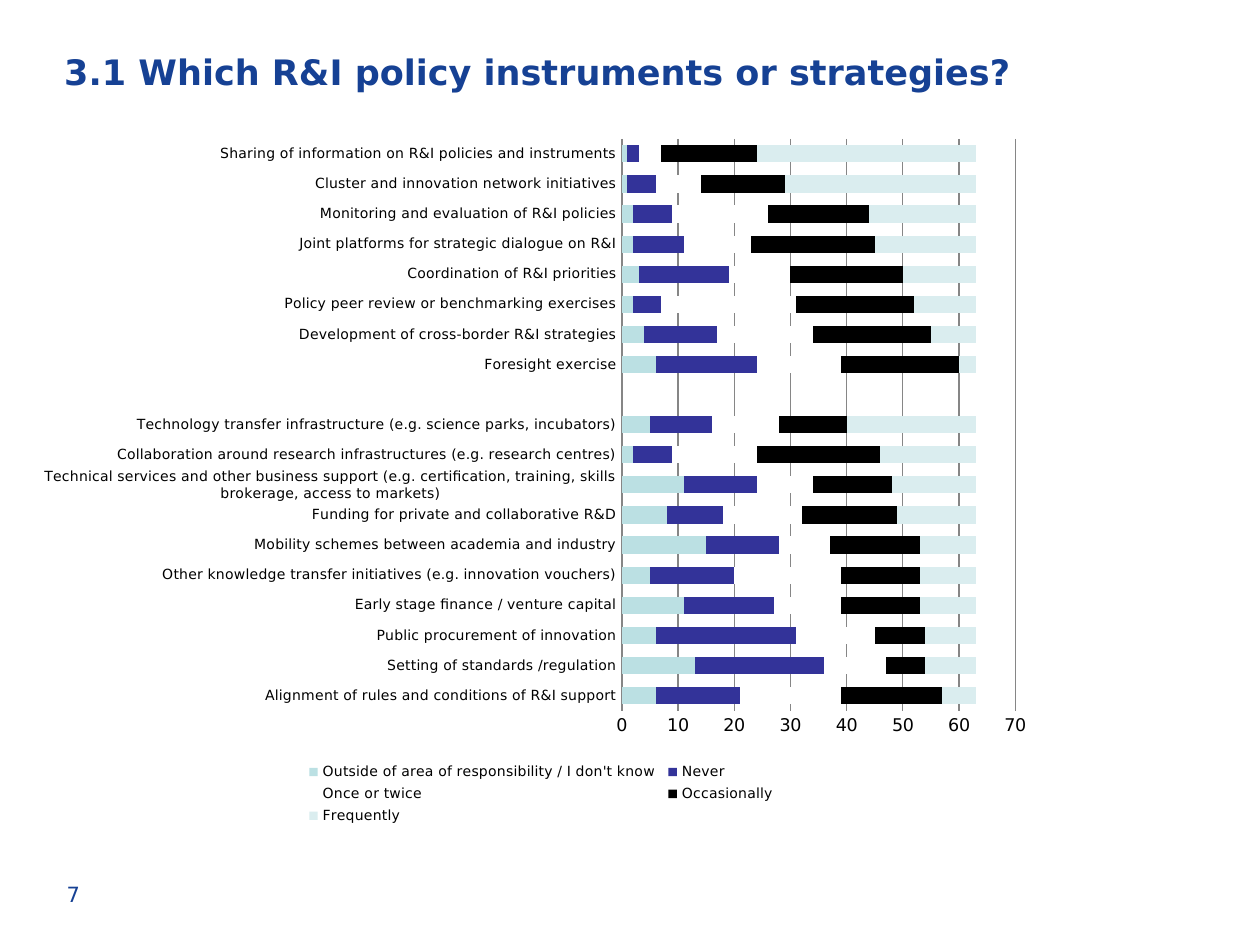
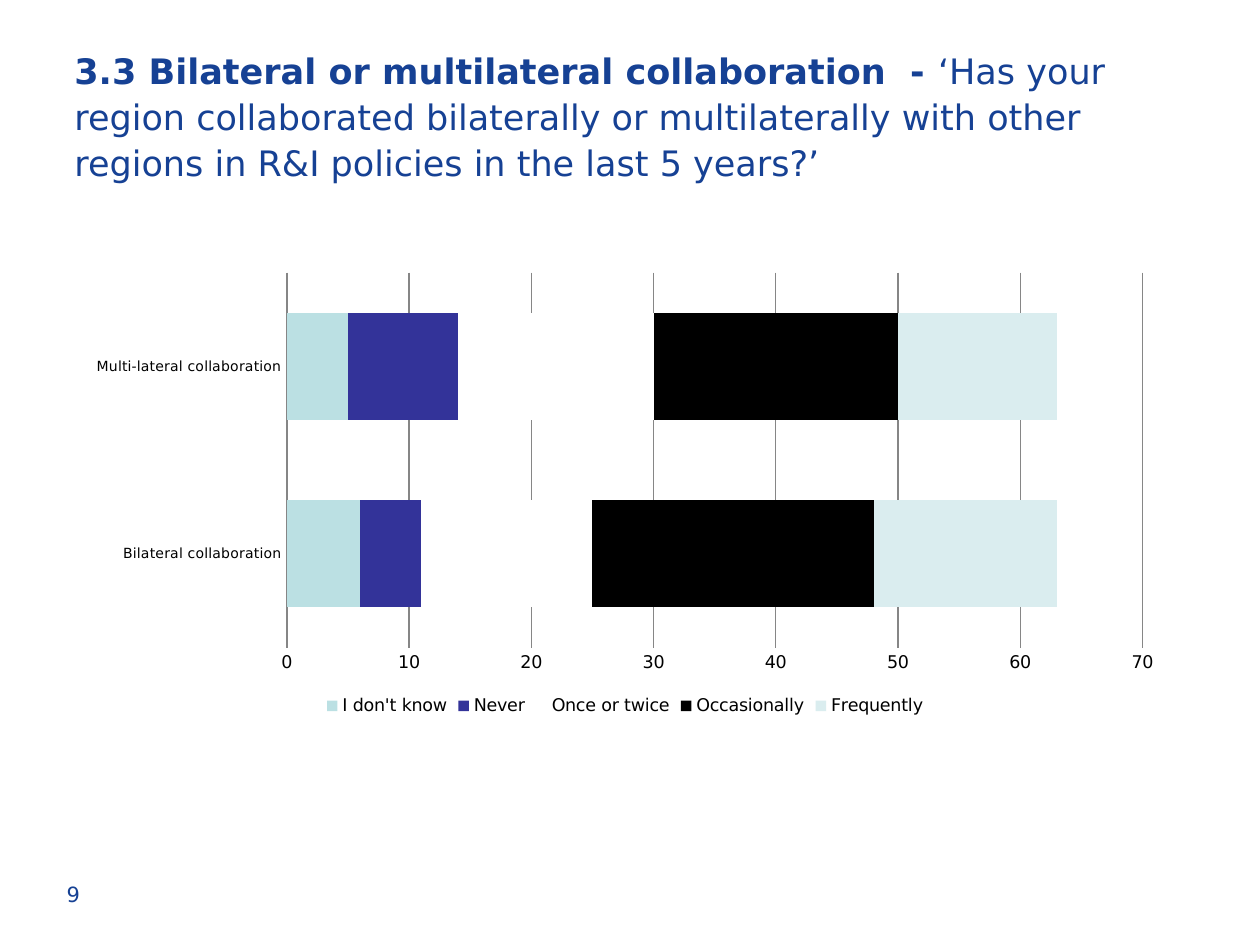
from pptx import Presentation
from pptx.chart.data import CategoryChartData
from pptx.dml.color import RGBColor
from pptx.enum.chart import XL_CHART_TYPE, XL_LEGEND_POSITION, XL_TICK_MARK
from pptx.enum.text import MSO_ANCHOR, MSO_AUTO_SIZE, PP_ALIGN
from pptx.oxml import parse_xml
from pptx.oxml.ns import nsdecls, qn
from pptx.util import Inches, Pt

STACKED_BAR = XL_CHART_TYPE.BAR_STACKED
LEGEND_BOTTOM = XL_LEGEND_POSITION.BOTTOM
NO_TICK = XL_TICK_MARK.NONE
TOP, MIDDLE = MSO_ANCHOR.TOP, MSO_ANCHOR.MIDDLE
NO_AUTOFIT = MSO_AUTO_SIZE.NONE
LEFT = PP_ALIGN.LEFT
TITLE_ONLY = 5

BLUE = RGBColor(0x16, 0x41, 0x94)
BLACK = RGBColor(0x00, 0x00, 0x00)
GRID_GREY = RGBColor(0x86, 0x86, 0x86)
ANSWER_COLOURS = [
    RGBColor(0xBB, 0xE0, 0xE3),
    RGBColor(0x33, 0x33, 0x99),
    RGBColor(0xFF, 0xFF, 0xFF),
    BLACK,
    RGBColor(0xDA, 0xED, 0xEF),
]

FONT = "DejaVu Sans"
TITLE_FORMAT = {"name": FONT, "size": Pt(20)}
NUMBER_FORMAT = {"name": FONT, "size": Pt(12)}
CHART_FORMAT = {"name": FONT, "size": Pt(10), "bold": False}
SMALL_FORMAT = {"name": FONT, "size": Pt(8), "bold": False}

FREQUENCIES = ["Never", "Once or twice", "Occasionally", "Frequently"]

# Each row: instrument, then answers from "don't know" to "Frequently", bottom bar first
INSTRUMENT_ROWS = [
    ("Alignment of rules and conditions of R&I support", 6, 15, 18, 18, 6),
    ("Setting of standards /regulation", 13, 23, 11, 7, 9),
    ("Public procurement of innovation", 6, 25, 14, 9, 9),
    ("Early stage finance / venture capital", 11, 16, 12, 14, 10),
    ("Other knowledge transfer initiatives (e.g. innovation vouchers)", 5, 15, 19, 14, 10),
    ("Mobility schemes between academia and industry", 15, 13, 9, 16, 10),
    ("Funding for private and collaborative R&D", 8, 10, 14, 17, 14),
    ("Technical services and other business support (e.g. certification, training, "
     "skills brokerage, access to markets)", 11, 13, 10, 14, 15),
    ("Collaboration around research infrastructures (e.g. research centres)", 2, 7, 15, 22, 17),
    ("Technology transfer infrastructure (e.g. science parks, incubators)", 5, 11, 12, 12, 23),
    ("", None, None, None, None, None),
    ("Foresight exercise", 6, 18, 15, 21, 3),
    ("Development of cross-border R&I strategies", 4, 13, 17, 21, 8),
    ("Policy peer review or benchmarking exercises", 2, 5, 24, 21, 11),
    ("Coordination of R&I priorities", 3, 16, 11, 20, 13),
    ("Joint platforms for strategic dialogue on R&I", 2, 9, 12, 22, 18),
    ("Monitoring and evaluation of R&I policies", 2, 7, 17, 18, 19),
    ("Cluster and innovation network initiatives", 1, 5, 8, 15, 34),
    ("Sharing of information on R&I policies and instruments", 1, 2, 4, 17, 39),
]
COLLABORATION_ROWS = [
    ("Bilateral collaboration", 6, 5, 14, 23, 15),
    ("Multi-lateral collaboration", 5, 9, 16, 20, 13),
]


def apply_format(font, values, colour):
    for attribute, value in values.items():
        setattr(font, attribute, value)
    font.color.rgb = colour


def manual_layout(x, y, width, height, target=""):
    """Return a chart layout element; lengths are fractions of the chart."""
    return parse_xml(
        f'<c:layout {nsdecls("c")}><c:manualLayout>{target}'
        '<c:xMode val="edge"/><c:yMode val="edge"/>'
        f'<c:x val="{x}"/><c:y val="{y}"/><c:w val="{width}"/><c:h val="{height}"/>'
        '</c:manualLayout></c:layout>'
    )


def replace_layout(parent, position, layout):
    for existing in parent.findall(qn("c:layout")):
        parent.remove(existing)
    parent.insert(position, layout)


class SurveyDeck:
    def __init__(self):
        self.presentation = Presentation()
        self.presentation.slide_width = Inches(10)
        self.presentation.slide_height = Inches(7.5)
        self.slide = None

    def add_slide(self, number):
        layout = self.presentation.slide_layouts[TITLE_ONLY]
        self.slide = self.presentation.slides.add_slide(layout)
        self.add_page_number(number)

    def add_page_number(self, number):
        box = self.slide.shapes.add_textbox(Inches(0.43), Inches(6.9), Inches(2.33), Inches(0.4))
        frame = box.text_frame
        frame.word_wrap = True
        frame.vertical_anchor = MIDDLE
        frame.margin_top = frame.margin_bottom = 0
        run = frame.paragraphs[0].add_run()
        run.text = str(number)
        apply_format(run.font, NUMBER_FORMAT, BLUE)

    def add_title(self, left, top, heading, question=""):
        """Write a bold heading, followed by a question in regular weight."""
        title = self.slide.shapes.title
        title.left, title.top = Inches(left), Inches(top)
        title.width, title.height = Inches(8.98), Inches(0.71)
        frame = title.text_frame
        frame.margin_left = frame.margin_right = frame.margin_top = frame.margin_bottom = 0
        frame.word_wrap = True
        frame.auto_size = NO_AUTOFIT
        frame.vertical_anchor = TOP
        paragraph = frame.paragraphs[0]
        paragraph.alignment = LEFT
        paragraph.line_spacing = 1.1
        for text, bold in ((heading, True), (question, False)):
            if text:
                run = paragraph.add_run()
                run.text = text
                apply_format(run.font, {**TITLE_FORMAT, "bold": bold}, BLUE)

    def add_answer_chart(self, bounds, unknown_label, rows, plot_area, legend_format,
                         legend_area=None):
        labels, *answers = zip(*rows)
        data = CategoryChartData(number_format="General")
        data.categories = labels
        for name, values in zip([unknown_label, *FREQUENCIES], answers):
            data.add_series(name, values)
        frame = self.slide.shapes.add_chart(STACKED_BAR, *map(Inches, bounds), data)
        chart = frame.chart
        chart.has_title = False
        apply_format(chart.font, CHART_FORMAT, BLACK)

        plot = chart.plots[0]
        plot.gap_width, plot.overlap = 75, 100
        plot.vary_by_categories = False
        for series, colour in zip(plot.series, ANSWER_COLOURS):
            series.format.fill.solid()
            series.format.fill.fore_color.rgb = colour
            series.format.line.fill.background()
        self.style_axes(chart)

        chart.has_legend = True
        chart.legend.position = LEGEND_BOTTOM
        chart.legend.include_in_layout = False
        apply_format(chart.legend.font, legend_format, BLACK)

        inner = '<c:layoutTarget val="inner"/>'
        plot_element = chart.element.find(".//" + qn("c:plotArea"))
        replace_layout(plot_element, 0, manual_layout(*plot_area, target=inner))
        if legend_area:
            legend_element = chart.element.find(".//" + qn("c:legend"))
            replace_layout(legend_element, 1, manual_layout(*legend_area))

    def style_axes(self, chart):
        categories, values = chart.category_axis, chart.value_axis
        for axis in (categories, values):
            axis.major_tick_mark = axis.minor_tick_mark = NO_TICK
        categories.has_major_gridlines = False
        apply_format(categories.tick_labels.font, SMALL_FORMAT, BLACK)
        values.minimum_scale, values.maximum_scale, values.major_unit = 0, 70, 10
        values.has_major_gridlines = True
        values.format.line.fill.background()
        for line in (categories.format.line, values.major_gridlines.format.line):
            line.color.rgb = GRID_GREY
            line.width = Pt(0.75)


def main():
    deck = SurveyDeck()

    deck.add_slide(7)
    deck.add_title(0.51, 0.37, "3.1 Which R&I policy instruments or strategies?")
    deck.add_answer_chart(
        (0.2, 0.99, 8.11, 5.59),
        "Outside of area of responsibility / I don't know",
        INSTRUMENT_ROWS,
        plot_area=(0.584, 0.02, 0.385, 0.812),
        legend_format=SMALL_FORMAT,
        legend_area=(0.27, 0.9, 0.47, 0.1),
    )

    deck.add_slide(9)
    deck.add_title(
        0.59, 0.36,
        "3.3 Bilateral or multilateral collaboration  - ",
        "‘Has your region collaborated bilaterally or multilaterally with other regions "
        "in R&I policies in the last 5 years?’",
    )
    deck.add_answer_chart(
        (0.59, 2.1, 8.74, 3.62),
        "I don't know",
        COLLABORATION_ROWS,
        plot_area=(0.193, 0.018, 0.777, 0.822),
        legend_format=CHART_FORMAT,
    )

    deck.presentation.save("out.pptx")


if __name__ == "__main__":
    main()
